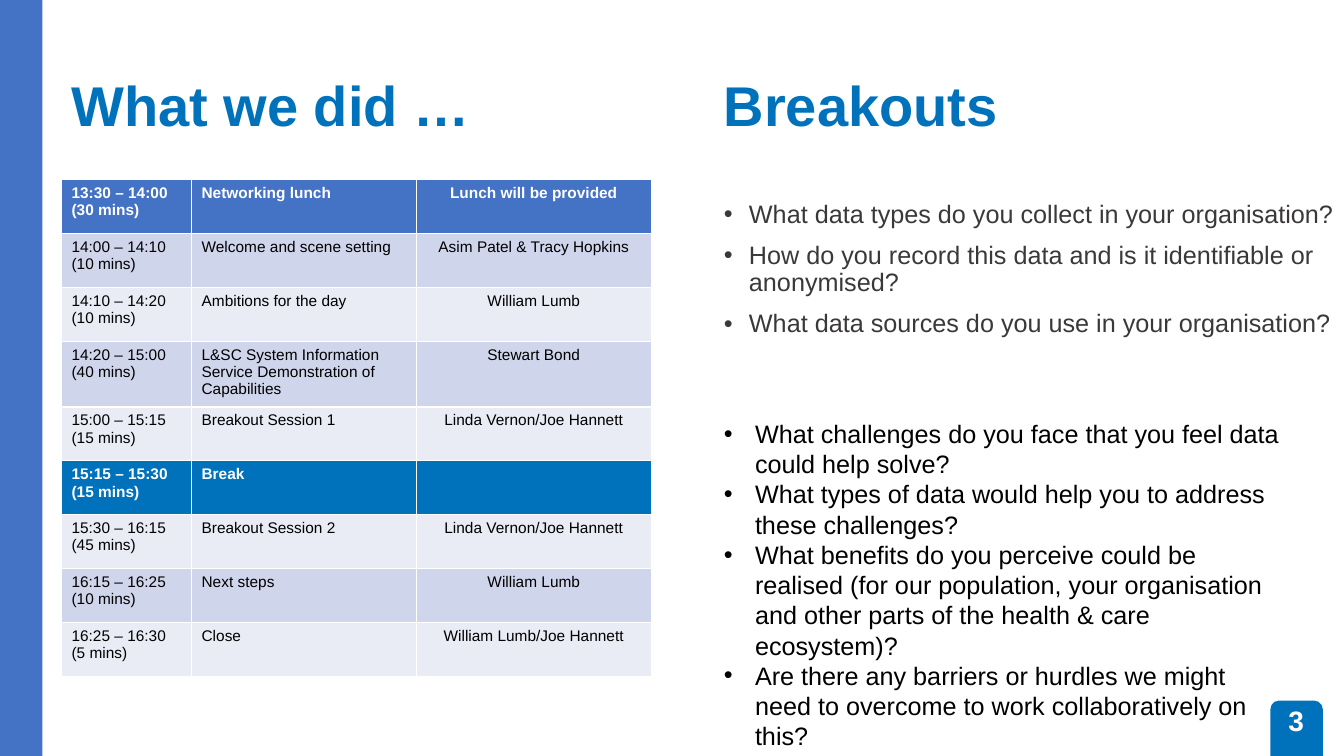
from lxml import etree
from pptx import Presentation
from pptx.dml.color import RGBColor
from pptx.enum import shapes, text
from pptx.oxml import ns
from pptx.util import Inches, Pt

BLUE = RGBColor(0x00, 0x72, 0xBC)
SIDE = RGBColor(0x44, 0x72, 0xC4)
WHITE = RGBColor(0xFF, 0xFF, 0xFF)
BLACK = RGBColor(0x00, 0x00, 0x00)
GREY = RGBColor(0x3B, 0x38, 0x38)
DARK = RGBColor(0xCF, 0xD5, 0xEA)
LIGHT = RGBColor(0xE9, 0xEB, 0xF5)

AGENDA = [
    ("13:30 – 14:00 (30 mins)", "Networking lunch", "Lunch will be provided"),
    ("14:00 – 14:10 (10 mins)", "Welcome and scene setting", "Asim Patel & Tracy Hopkins"),
    ("14:10 – 14:20 (10 mins)", "Ambitions for the day", "William Lumb"),
    ("14:20 – 15:00 (40 mins)",
     "L&SC System Information Service Demonstration of Capabilities", "Stewart Bond"),
    ("15:00 – 15:15 (15 mins)", "Breakout Session 1", "Linda Vernon/Joe Hannett"),
    ("15:15 – 15:30 (15 mins)", "Break", ""),
    ("15:30 – 16:15 (45 mins)", "Breakout Session 2", "Linda Vernon/Joe Hannett"),
    ("16:15 – 16:25 (10 mins)", "Next steps", "William Lumb"),
    ("16:25 – 16:30 (5 mins)", "Close", "William Lumb/Joe Hannett"),
]
WIDTHS = (1.29, 2.23, 2.33)
FILLS = {0: SIDE, 5: BLUE}  # header and break rows

FIRST = [
    "What data types do you collect in your organisation?",
    "How do you record this data and is it identifiable or anonymised?",
    "What data sources do you use in your organisation?",
]
SECOND = [
    "What challenges do you face that you feel data could help solve?",
    "What types of data would help you to address these challenges?",
    "What benefits do you perceive could be realised (for our population, "
    "your organisation and other parts of the health & care ecosystem)?",
    "Are there any barriers or hurdles we might need to overcome to work "
    "collaboratively on this?",
]


def write(frame, lines, size=18, color=BLACK, bold=False, align=text.PP_ALIGN.LEFT,
          anchor=text.MSO_ANCHOR.TOP, indent=0, gap=0, line=1.0):
    frame.word_wrap = True
    frame.vertical_anchor = anchor
    for i, words in enumerate(lines):
        para = frame.paragraphs[0] if i == 0 else frame.add_paragraph()
        if indent:
            props = para._p.get_or_add_pPr()
            props.set("marL", str(Inches(indent)))
            props.set("indent", str(-Inches(indent)))
            etree.SubElement(props, ns.qn("a:buFont"), typeface="Arial")
            etree.SubElement(props, ns.qn("a:buChar"), char="•")
        para.alignment = align
        para.line_spacing = line
        para.space_before = Pt(gap if i else 0)
        font = para.font
        font.name, font.size, font.bold = "Arial", Pt(size), bold
        font.color.rgb = color
        para.add_run().text = words


def label(slide, box, lines, **look):
    area = slide.shapes.add_textbox(*map(Inches, box))
    write(area.text_frame, lines, **look)


def block(slide, kind, box, color):
    part = slide.shapes.add_shape(kind, *map(Inches, box))
    part.shadow.inherit = False
    part.fill.solid()
    part.fill.fore_color.rgb = color
    part.line.fill.background()


def frame(slide):
    # Side band and page number tab
    block(slide, shapes.MSO_SHAPE.ROUNDED_RECTANGLE, (12.6, 6.95, 0.52, 0.75), BLUE)
    block(slide, shapes.MSO_SHAPE.RECTANGLE, (-0.07, -0.08, 0.49, 7.84), SIDE)
    label(slide, (12.59, 6.95, 0.53, 0.4), ["3"], size=20, color=WHITE, bold=True,
          align=text.PP_ALIGN.CENTER, anchor=text.MSO_ANCHOR.MIDDLE)


def title(slide, left, top, width, words):
    label(slide, (left, top, width, 0.8), [words], size=40, color=BLUE, bold=True,
          anchor=text.MSO_ANCHOR.MIDDLE, line=0.9)


def agenda(slide, left, top, width, height):
    title(slide, left, top - 1.1, width, "What we did …")
    # The default table style supplies the white rules
    table = slide.shapes.add_table(len(AGENDA), len(WIDTHS), Inches(left), Inches(top),
                                   Inches(width), Inches(height)).table
    for col, size in zip(table.columns, WIDTHS):
        col.width = Inches(size)
    for r, row in enumerate(AGENDA):
        strong = r in FILLS
        for c, words in enumerate(row):
            cell = table.cell(r, c)
            cell.fill.solid()
            cell.fill.fore_color.rgb = FILLS.get(r, DARK if r % 2 else LIGHT)
            write(cell.text_frame, [words], size=11, bold=strong,
                  color=WHITE if strong else BLACK,
                  align=text.PP_ALIGN.CENTER if c == 2 else text.PP_ALIGN.LEFT)


def breakouts(slide, left, top, width):
    title(slide, left, top - 1.27, width, "Breakouts")
    label(slide, (left, top, width, 1.97), FIRST, color=GREY, indent=0.25, gap=10, line=0.9)
    label(slide, (left, top + 2.15, 5.78, 3.43), SECOND, indent=0.31)


def main():
    deck = Presentation()
    deck.slide_width, deck.slide_height = Inches(13.33), Inches(7.5)
    slide = deck.slides.add_slide(deck.slide_layouts[6])
    frame(slide)
    agenda(slide, 0.61, 1.78, 5.85, 4.82)
    breakouts(slide, 7.08, 1.95, 6.25)
    deck.save("out.pptx")


if __name__ == "__main__":
    main()
